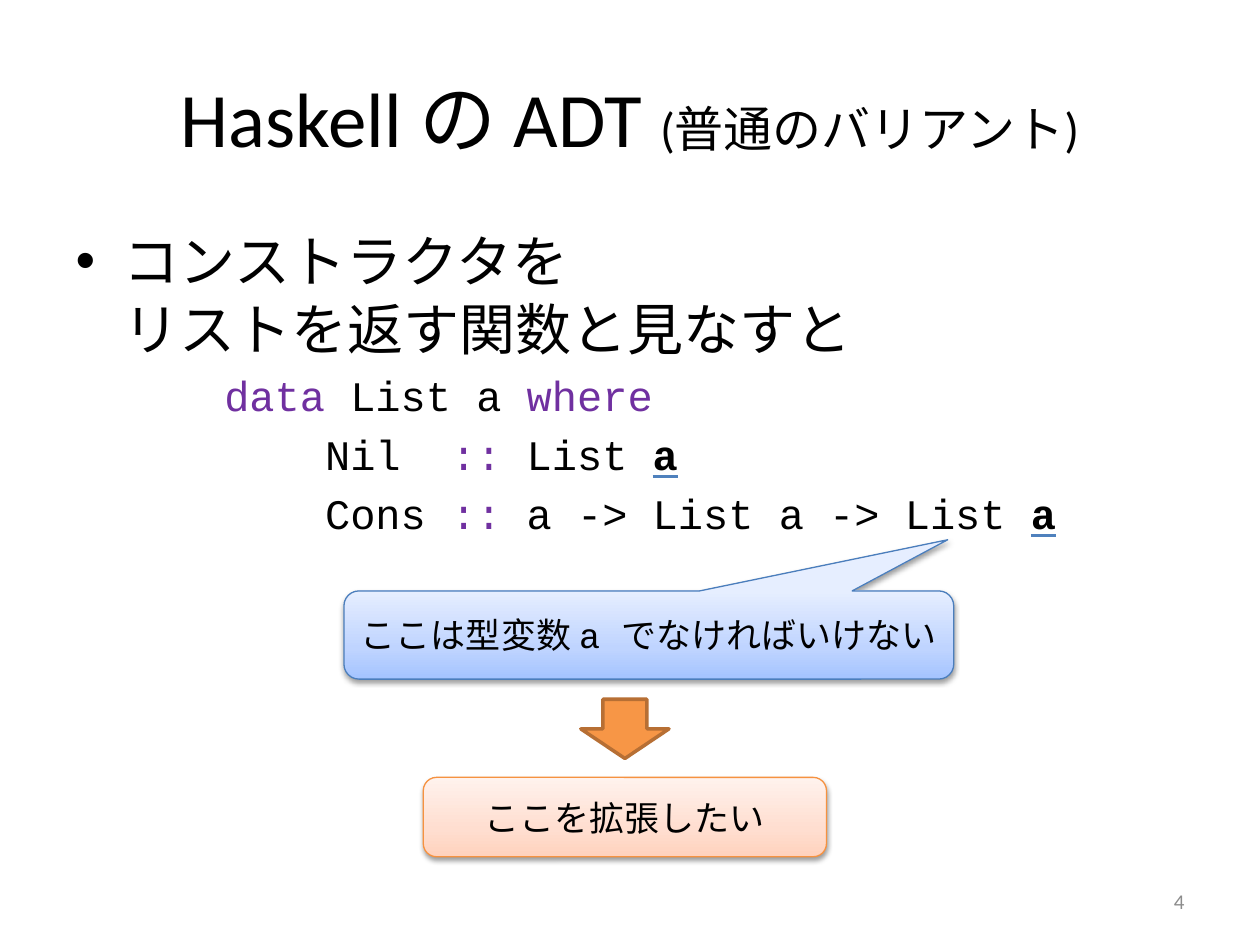
from lxml.etree import SubElement
from pptx import Presentation
from pptx.dml.color import RGBColor
from pptx.enum.shapes import MSO_SHAPE as SHAPE
from pptx.enum.text import MSO_ANCHOR as ANCHOR, MSO_AUTO_SIZE as AUTO_SIZE, PP_ALIGN as ALIGN
from pptx.oxml.ns import qn
from pptx.util import Inches, Pt

BLACK = RGBColor(0x00, 0x00, 0x00)
PURPLE = RGBColor(0x70, 0x30, 0xA0)
GRAY = RGBColor(0x8C, 0x8C, 0x8C)
UNDERLINE = RGBColor(0x4F, 0x81, 0xBD)
BLUE_LINE = RGBColor(0x4B, 0x7E, 0xBC)
ORANGE = RGBColor(0xF7, 0x96, 0x46)
ORANGE_LINE = RGBColor(0xF6, 0x92, 0x40)
ARROW_LINE = RGBColor(0xB7, 0x6F, 0x34)
BLUES = [(0, RGBColor(0xA4, 0xC4, 0xFF)), (35, RGBColor(0xBF, 0xD4, 0xFF)),
         (100, RGBColor(0xE6, 0xEE, 0xFF))]
PEACHES = [(0, RGBColor(0xFF, 0xD2, 0xBD)), (35, RGBColor(0xFF, 0xDE, 0xD0)),
           (100, RGBColor(0xFF, 0xF2, 0xED))]
SANS, MONO = "Calibri", "Courier New"


def place(sp, left, top, width, height):
    sp.left, sp.top = Inches(left), Inches(top)
    sp.width, sp.height = Inches(width), Inches(height)


def add_run(p, text, size, font=SANS, color=BLACK):
    r = p.add_run()
    r.text = text
    r.font.size, r.font.name = Pt(size), font
    r.font.color.rgb = color
    return r


def set_indent(p, left, first=0.0, bullet=None):
    pPr = p._p.get_or_add_pPr()
    pPr.set("marL", str(Inches(left)))
    pPr.set("indent", str(Inches(first)))
    if bullet:
        SubElement(pPr, qn("a:buChar"), char=bullet)
    else:
        SubElement(pPr, qn("a:buNone"))


def add_code_line(tf, indent, parts):
    """Add a line of code; each part is (text, style)."""
    p = tf.add_paragraph()
    p.level = 1
    set_indent(p, indent)
    for text, style in parts:
        r = add_run(p, text, 24, MONO, PURPLE if style == "keyword" else BLACK)
        if style == "result":
            r.font.bold = r.font.underline = True
            u_fill = SubElement(r._r.rPr, qn("a:uFill"))
            fill = SubElement(u_fill, qn("a:solidFill"))
            SubElement(fill, qn("a:srgbClr"), val=str(UNDERLINE))
            r._r.rPr.find(qn("a:solidFill")).addnext(u_fill)


def add_box(slide, kind, box, line, width):
    sp = slide.shapes.add_shape(kind, *map(Inches, box))
    sp.shadow.inherit = False
    sp.line.color.rgb, sp.line.width = line, Pt(width)
    return sp


def add_glossy_box(slide, kind, box, line, stops, parts):
    """Add a gradient box with a soft shadow and centred text."""
    sp = add_box(slide, kind, box, line, 0.75)
    sp.fill.gradient()
    sp.fill.gradient_angle = 90
    gs_list = sp._element.spPr.find(qn("a:gradFill")).find(qn("a:gsLst"))
    for gs in list(gs_list):
        gs_list.remove(gs)
    for pos, color in stops:
        gs = SubElement(gs_list, qn("a:gs"), pos=str(pos * 1000))
        SubElement(gs, qn("a:srgbClr"), val=str(color))

    effects = sp._element.spPr.find(qn("a:effectLst"))
    shadow = SubElement(effects, qn("a:outerShdw"), blurRad=str(Pt(3.1)),
                        dist=str(Pt(1.6)), dir="5400000", rotWithShape="0")
    color = SubElement(shadow, qn("a:srgbClr"), val=str(BLACK))
    SubElement(color, qn("a:alpha"), val="38000")

    tf = sp.text_frame
    tf.word_wrap, tf.vertical_anchor = True, ANCHOR.MIDDLE
    p = tf.paragraphs[0]
    p.alignment = ALIGN.CENTER
    for text, font in parts:
        add_run(p, text, 20, font)
    return sp


def add_title(slide):
    sp = slide.shapes.title
    place(sp, 0.5, 0.3, 9, 1.25)
    p = sp.text_frame.paragraphs[0]
    add_run(p, "Haskell の ADT ", 44)
    add_run(p, "(普通のバリアント)", 28)


def add_body(slide):
    sp = slide.placeholders[1]
    place(sp, 0.5, 1.75, 9, 4.95)
    tf = sp.text_frame
    tf.auto_size = AUTO_SIZE.NONE
    p = tf.paragraphs[0]
    set_indent(p, 0.38, -0.38, "•")
    add_run(p, "コンストラクタを", 32)
    p.add_line_break()
    add_run(p, "リストを返す関数と見なすと", 32)

    # Constructors sit four characters inside the data line
    outer, inner = 1.18, 1.98
    add_code_line(tf, outer, [("data", "keyword"), (" List a ", None), ("where", "keyword")])
    add_code_line(tf, inner, [("Nil  ", None), (":: ", "keyword"), ("List ", None),
                              ("a", "result")])
    add_code_line(tf, inner, [("Cons ", None), ("::", "keyword"),
                              (" a -> List a -> List ", None), ("a", "result")])


def add_page_number(slide, number):
    sp = slide.shapes.add_textbox(*map(Inches, (7.17, 6.95, 2.33, 0.4)))
    tf = sp.text_frame
    tf.word_wrap, tf.vertical_anchor = True, ANCHOR.MIDDLE
    p = tf.paragraphs[0]
    p.alignment = ALIGN.RIGHT
    add_run(p, number, 12, color=GRAY)


def main():
    prs = Presentation()
    prs.slide_width, prs.slide_height = Inches(10), Inches(7.5)
    slide = prs.slides.add_slide(prs.slide_layouts[1])
    add_title(slide)
    add_body(slide)

    # Callout pointing at the result type
    callout = add_glossy_box(
        slide, SHAPE.ROUNDED_RECTANGULAR_CALLOUT, (2.73, 4.69, 4.84, 0.7), BLUE_LINE, BLUES,
        [("ここは型変数 ", SANS), ("a ", MONO), ("でなければいけない", SANS)])
    for i, value in enumerate((0.49, -1.08, 0.17)):
        callout.adjustments[i] = value

    # Arrow down to the goal
    arrow = add_box(slide, SHAPE.DOWN_ARROW, (4.61, 5.55, 0.7, 0.47), ARROW_LINE, 2)
    arrow.fill.solid()
    arrow.fill.fore_color.rgb = ORANGE
    add_glossy_box(slide, SHAPE.ROUNDED_RECTANGLE, (3.36, 6.17, 3.2, 0.63), ORANGE_LINE,
                   PEACHES, [("ここを拡張したい", SANS)])

    add_page_number(slide, "4")
    prs.save("out.pptx")


if __name__ == "__main__":
    main()
